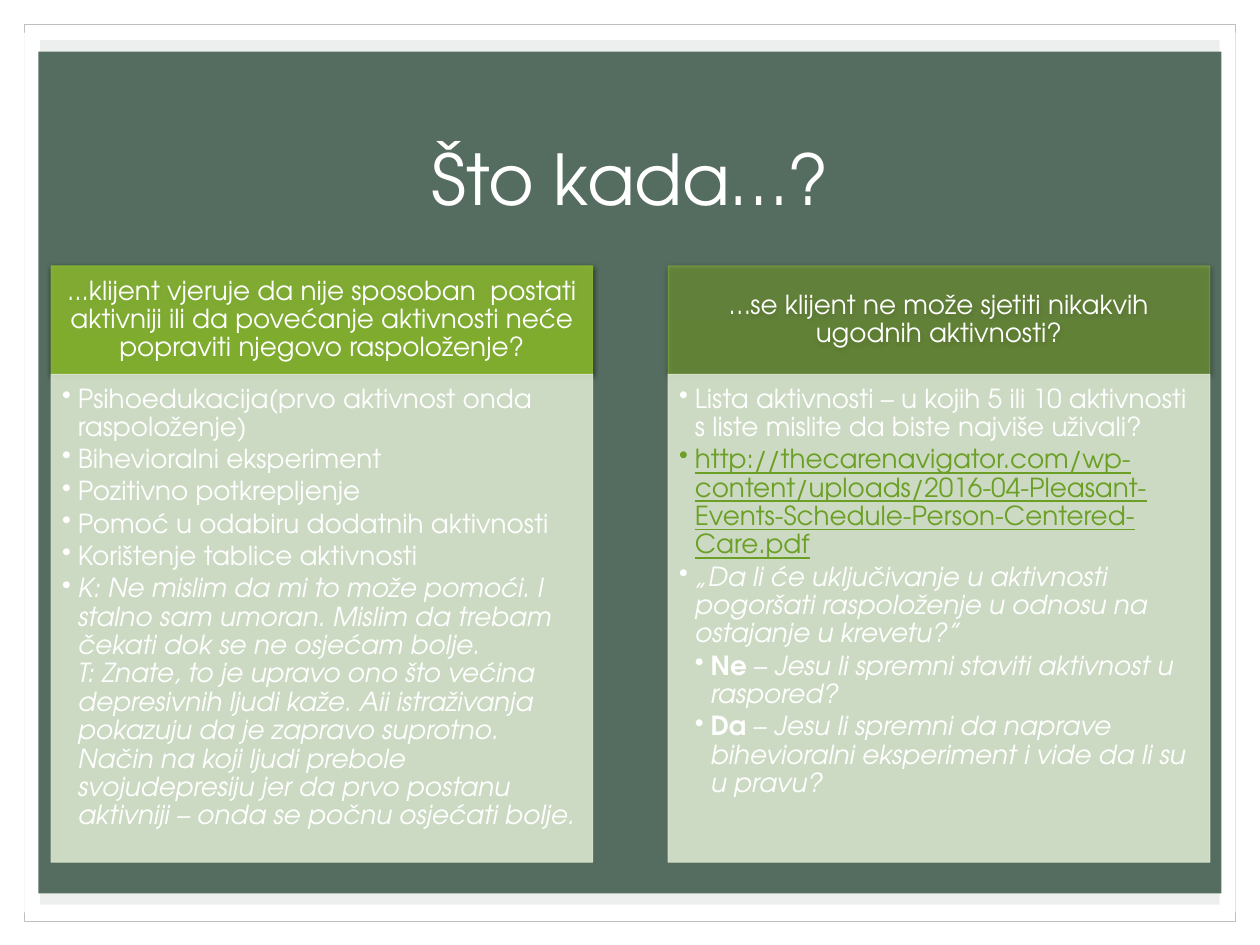
from dataclasses import dataclass

from lxml.etree import SubElement
from pptx import Presentation
from pptx.dml.color import RGBColor
from pptx.enum.shapes import MSO_SHAPE
from pptx.enum.text import MSO_ANCHOR, PP_ALIGN
from pptx.oxml.ns import qn
from pptx.util import Pt


@dataclass(frozen=True)
class Theme:
    font: str = "TeX Gyre Adventor"
    white: str = "FFFFFF"
    frame: str = "BFBFBF"
    green: str = "455F51"
    header_top: str = "8AB833"
    header_bottom: str = "8ABA2F"
    pale: str = "DAE6CE"
    link: str = "6B9F25"
    title_size: float = 40
    body_size: float = 15
    hairline: float = 0.5


THEME = Theme()


def write(paragraph, text, size=THEME.body_size, color=THEME.white,
          bold=False, italic=False, underline=False):
    for number, line in enumerate(text.split("\n")):
        if number:
            paragraph.add_line_break()
        run = paragraph.add_run()
        run.text = line
        font = run.font
        font.name, font.size = THEME.font, Pt(size)
        font.bold, font.italic, font.underline = bold, italic, underline
        font.color.rgb = RGBColor.from_string(color)


class SlideBuilder:
    def __init__(self, slide, theme):
        self.slide = slide
        self.theme = theme

    def panel(self, box, colors, line=None, opacity=100):
        panel = self.slide.shapes.add_shape(MSO_SHAPE.RECTANGLE, *map(Pt, box))
        panel.shadow.inherit = False
        if len(colors) == 1:
            panel.fill.solid()
            panel.fill.fore_color.rgb = RGBColor.from_string(colors[0])
        else:
            panel.fill.gradient()
            panel.fill.gradient_angle = 270
            for stop, color in zip(panel.fill.gradient_stops, colors):
                stop.color.rgb = RGBColor.from_string(color)
        if line:
            panel.line.color.rgb = RGBColor.from_string(line)
            panel.line.width = Pt(self.theme.hairline)
        else:
            panel.line.fill.background()
        if opacity < 100:
            for color in panel._element.spPr.iter(qn("a:srgbClr")):
                SubElement(color, qn("a:alpha"), val=str(opacity * 1000))
        return panel

    def cast_shadow(self, panel):
        effects = panel._element.spPr.find(qn("a:effectLst"))
        shadow = SubElement(effects, qn("a:outerShdw"), blurRad=str(Pt(3)),
                            dist=str(Pt(1)), dir="5400000", rotWithShape="0")
        black = SubElement(shadow, qn("a:srgbClr"), val="000000")
        SubElement(black, qn("a:alpha"), val="63000")

    def frame_text(self, shape, anchor, margins):
        frame = shape.text_frame
        frame.word_wrap = True
        frame.vertical_anchor = anchor
        (frame.margin_left, frame.margin_top,
         frame.margin_right, frame.margin_bottom) = map(Pt, margins)
        return frame

    def paragraph(self, frame, first, align, space_after=0):
        paragraph = frame.paragraphs[0] if first else frame.add_paragraph()
        paragraph.alignment = align
        paragraph.line_spacing = 0.9
        paragraph.space_after = Pt(space_after)
        return paragraph

    def title(self, box, text):
        title = self.slide.shapes.add_textbox(*map(Pt, box))
        frame = self.frame_text(title, MSO_ANCHOR.MIDDLE, (7.2, 3.6, 7.2, 3.6))
        write(self.paragraph(frame, True, PP_ALIGN.CENTER), text,
              size=self.theme.title_size)

    def header(self, box, text, opacity):
        theme = self.theme
        header = self.panel(box, (theme.header_top, theme.header_bottom),
                            theme.header_top, opacity)
        self.cast_shadow(header)
        frame = self.frame_text(header, MSO_ANCHOR.MIDDLE, (8.4, 4.8, 8.4, 4.8))
        write(self.paragraph(frame, True, PP_ALIGN.CENTER), text)

    def bullets(self, box, items):
        theme = self.theme
        body = self.panel(box, (theme.pale,), theme.pale, 90)
        frame = self.frame_text(body, MSO_ANCHOR.TOP, (6.3, 6.3, 8.4, 9.45))
        for number, (level, pieces) in enumerate(items):
            paragraph = self.paragraph(frame, number == 0, PP_ALIGN.LEFT,
                                       0.15 * theme.body_size)
            paragraph.level = level
            properties = paragraph._p.get_or_add_pPr()
            properties.set("marL", str(Pt(9 * level)))
            properties.set("indent", str(Pt(-9)))
            SubElement(properties, qn("a:buChar"), char="•")
            for text, style in pieces:
                write(paragraph, text, **style)


PLAIN = {}
BOLD = {"bold": True}
ITALIC = {"italic": True}
LINK = {"color": THEME.link, "underline": True}

COLUMNS = [
    ("...klijent vjeruje da nije sposoban  postati aktivniji ili da povećanje "
     "aktivnosti neće popraviti njegovo raspoloženje?", 90, [
         (1, [("Psihoedukacija(prvo aktivnost onda raspoloženje)", PLAIN)]),
         (1, [("Bihevioralni eksperiment", PLAIN)]),
         (1, [("Pozitivno potkrepljenje", PLAIN)]),
         (1, [("Pomoć u odabiru dodatnih aktivnosti", PLAIN)]),
         (1, [("Korištenje tablice aktivnosti", PLAIN)]),
         (1, [("K: Ne mislim da mi to može pomoći. I stalno sam umoran. "
               "Mislim da trebam čekati dok se ne osjećam bolje.\n"
               "T: Znate, to je upravo ono što većina depresivnih ljudi kaže. "
               "Aii istraživanja pokazuju da je zapravo suprotno. "
               "Način na koji ljudi prebole svojudepresiju jer da prvo postanu "
               "aktivniji – onda se počnu osjećati bolje.", ITALIC)]),
     ]),
    ("…se klijent ne može sjetiti nikakvih ugodnih aktivnosti?", 50, [
        (1, [("Lista aktivnosti – u kojih 5 ili 10 aktivnosti s liste mislite "
              "da biste najviše uživali?", PLAIN)]),
        (1, [("http://thecarenavigator.com/wp-content/uploads/2016-04-Pleasant-"
              "Events-Schedule-Person-Centered-Care.pdf", LINK)]),
        (1, [("„Da li će uključivanje u aktivnosti pogoršati raspoloženje "
              "u odnosu na ostajanje u krevetu?”", ITALIC)]),
        (2, [("Ne", BOLD), (" – ", PLAIN),
             ("Jesu li spremni staviti aktivnost u raspored?", ITALIC)]),
        (2, [("Da", BOLD), (" – ", PLAIN),
             ("Jesu li spremni da naprave bihevioralni eksperiment i vide "
              "da li su u pravu?", ITALIC)]),
    ]),
]


def main():
    presentation = Presentation()
    presentation.slide_width, presentation.slide_height = Pt(720), Pt(540)
    slide = presentation.slides.add_slide(presentation.slide_layouts[6])
    builder = SlideBuilder(slide, THEME)

    builder.panel((13.8, 13.8, 692.4, 512.6), (THEME.white,), THEME.frame)
    builder.panel((23, 23, 674, 494), (THEME.green,))
    builder.panel((13.8, 18.7, 692.4, 502.6), (THEME.white,), opacity=90)
    builder.panel((22, 29.5, 676, 481), (THEME.green,), opacity=90)
    builder.title((63, 50.4, 594, 108), "Što kada…?")

    left, top, width, pitch = 29.2, 151.9, 309.6, 352.6
    header_height, body_height = 62, 278.8
    for number, (question, opacity, answers) in enumerate(COLUMNS):
        x = left + number * pitch
        builder.header((x, top, width, header_height), question, opacity)
        builder.bullets((x, top + header_height, width, body_height), answers)

    presentation.save("out.pptx")


if __name__ == "__main__":
    main()
